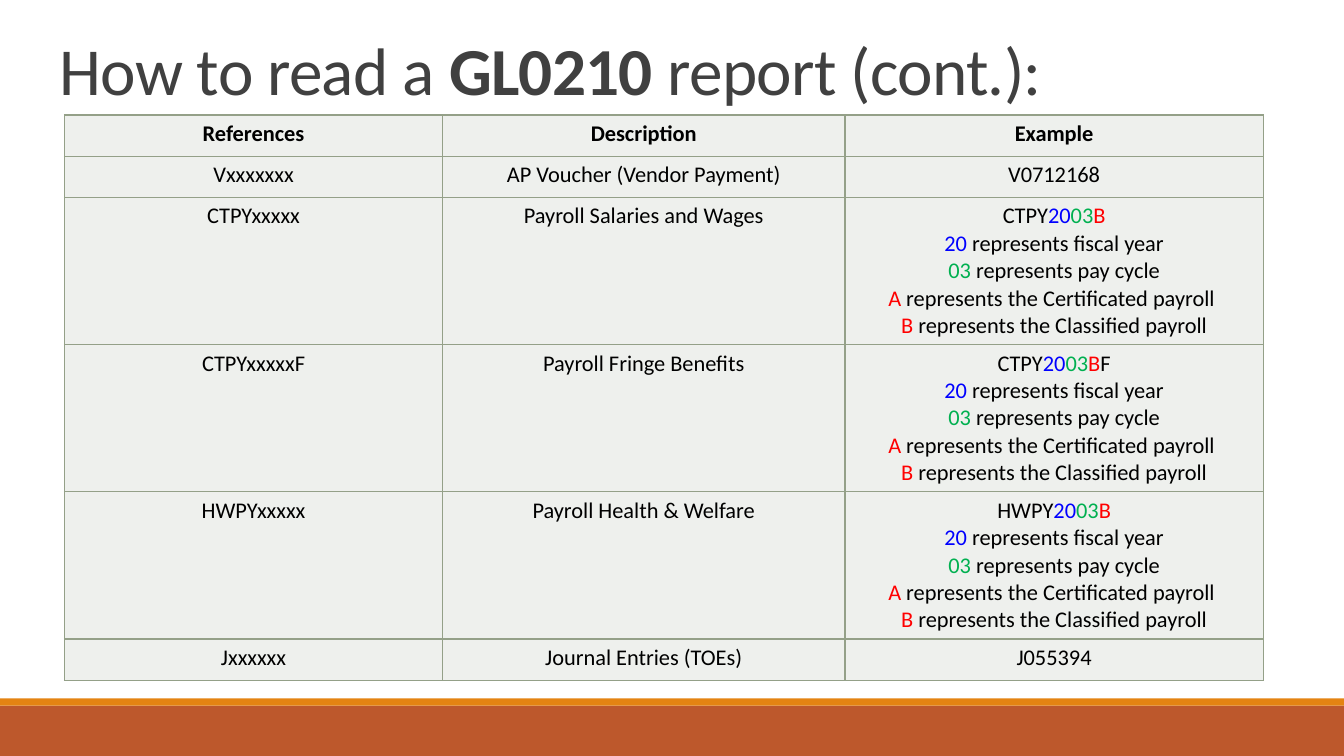
from dataclasses import dataclass

from lxml.etree import SubElement
from pptx import Presentation
from pptx.dml.color import RGBColor
from pptx.enum.shapes import MSO_SHAPE as Preset
from pptx.enum.text import MSO_ANCHOR as Anchor, MSO_AUTO_SIZE as AutoSize, PP_ALIGN as Align
from pptx.oxml.ns import qn
from pptx.util import Inches, Pt

FONT = "Calibri"
BLACK, BLUE, GREEN, RED = "000000", "0000FF", "00B050", "FF0000"
CELL_FILL, CELL_BORDER = "EEF0ED", "94A088"


@dataclass(frozen=True)
class Piece:
    text: str
    color: str = BLACK
    bold: bool = False


@dataclass(frozen=True)
class Band:
    top: float
    height: float
    color: str


@dataclass(frozen=True)
class Reference:
    code: str
    description: str
    example: list[list[Piece]]
    height: float = 0.41
    bold: bool = False


def rgb(color: str) -> RGBColor:
    return RGBColor.from_string(color)


def payroll(code: str, description: str, prefix: str, suffix: str = "") -> Reference:
    year, cycle = Piece("20", BLUE), Piece("03", GREEN)
    certificated, classified = Piece("A", RED), Piece("B", RED)
    sample = [Piece(prefix), year, cycle, classified]
    if suffix:
        sample.append(Piece(suffix))
    legend = [
        [year, Piece(" represents fiscal year")],
        [cycle, Piece(" represents pay cycle")],
        [certificated, Piece(" represents the Certificated payroll ")],
        [classified, Piece(" represents the Classified payroll")],
    ]
    return Reference(code, description, [sample, *legend], 1.46)


BANDS = [Band(7, 0.5, "BD582C"), Band(6.93, 0.07, "E48312")]
TITLE = [
    Piece("How to read a ", "404040"),
    Piece("GL0210 ", "404040", True),
    Piece("report (cont.):", "404040"),
]
COLUMN_WIDTHS = [3.75, 3.99, 4.15]
REFERENCES = [
    Reference("References", "Description", [[Piece("Example", bold=True)]], bold=True),
    Reference("Vxxxxxxx", "AP Voucher (Vendor Payment)", [[Piece("V0712168")]]),
    payroll("CTPYxxxxx", "Payroll Salaries and Wages", "CTPY"),
    payroll("CTPYxxxxxF", "Payroll Fringe Benefits", "CTPY", "F"),
    payroll("HWPYxxxxx", "Payroll Health & Welfare", "HWPY"),
    Reference("Jxxxxxx", "Journal Entries (TOEs)", [[Piece("J055394")]]),
]


def write_pieces(para, pieces: list[Piece], size: float) -> None:
    for piece in pieces:
        run = para.add_run()
        run.text = piece.text
        run.font.name = FONT
        run.font.size = Pt(size)
        run.font.bold = piece.bold
        run.font.color.rgb = rgb(piece.color)


def draw_band(page, band: Band, width: int) -> None:
    box = page.shapes.add_shape(
        Preset.RECTANGLE, 0, Inches(band.top), width, Inches(band.height))
    box.shadow.inherit = False
    box.fill.solid()
    box.fill.fore_color.rgb = rgb(band.color)
    box.line.fill.background()


def draw_title(page) -> None:
    title = page.shapes.title
    title.left, title.top = Inches(0.49), Inches(0.31)
    title.width, title.height = Inches(12.28), Inches(0.86)
    frame = title.text_frame
    frame.word_wrap = True
    frame.auto_size = AutoSize.NONE
    frame.vertical_anchor = Anchor.MIDDLE
    para = frame.paragraphs[0]
    para.alignment = Align.LEFT
    para.line_spacing = 0.85
    write_pieces(para, TITLE, 48)
    for run in para.runs:
        run.font._element.set("spc", "-50")


def style_cell(cell) -> None:
    properties = cell._tc.get_or_add_tcPr()
    for side in ("lnL", "lnR", "lnT", "lnB"):
        border = SubElement(properties, qn(f"a:{side}"), w=str(Pt(1)))
        fill = SubElement(border, qn("a:solidFill"))
        SubElement(fill, qn("a:srgbClr"), val=CELL_BORDER)
    cell.fill.solid()
    cell.fill.fore_color.rgb = rgb(CELL_FILL)


def fill_cell(cell, lines: list[list[Piece]]) -> None:
    style_cell(cell)
    frame = cell.text_frame
    for index, pieces in enumerate(lines):
        para = frame.add_paragraph() if index else frame.paragraphs[0]
        para.alignment = Align.CENTER
        write_pieces(para, pieces, 16)


def draw_references(page) -> None:
    height = sum(reference.height for reference in REFERENCES)
    table = page.shapes.add_table(
        len(REFERENCES), len(COLUMN_WIDTHS), Inches(0.64), Inches(1.14),
        Inches(sum(COLUMN_WIDTHS)), Inches(height)).table
    table.first_row = False
    table.horz_banding = False
    for column, width in zip(table.columns, COLUMN_WIDTHS):
        column.width = Inches(width)
    for row, reference in zip(table.rows, REFERENCES):
        row.height = Inches(reference.height)
        contents = [
            [[Piece(reference.code, bold=reference.bold)]],
            [[Piece(reference.description, bold=reference.bold)]],
            reference.example,
        ]
        for cell, lines in zip(row.cells, contents):
            fill_cell(cell, lines)


def main() -> None:
    deck = Presentation()
    deck.slide_width, deck.slide_height = Inches(13.33), Inches(7.5)
    page = deck.slides.add_slide(deck.slide_layouts.get_by_name("Title Only"))
    for band in BANDS:
        draw_band(page, band, deck.slide_width)
    draw_title(page)
    draw_references(page)
    deck.save("out.pptx")


if __name__ == "__main__":
    main()
